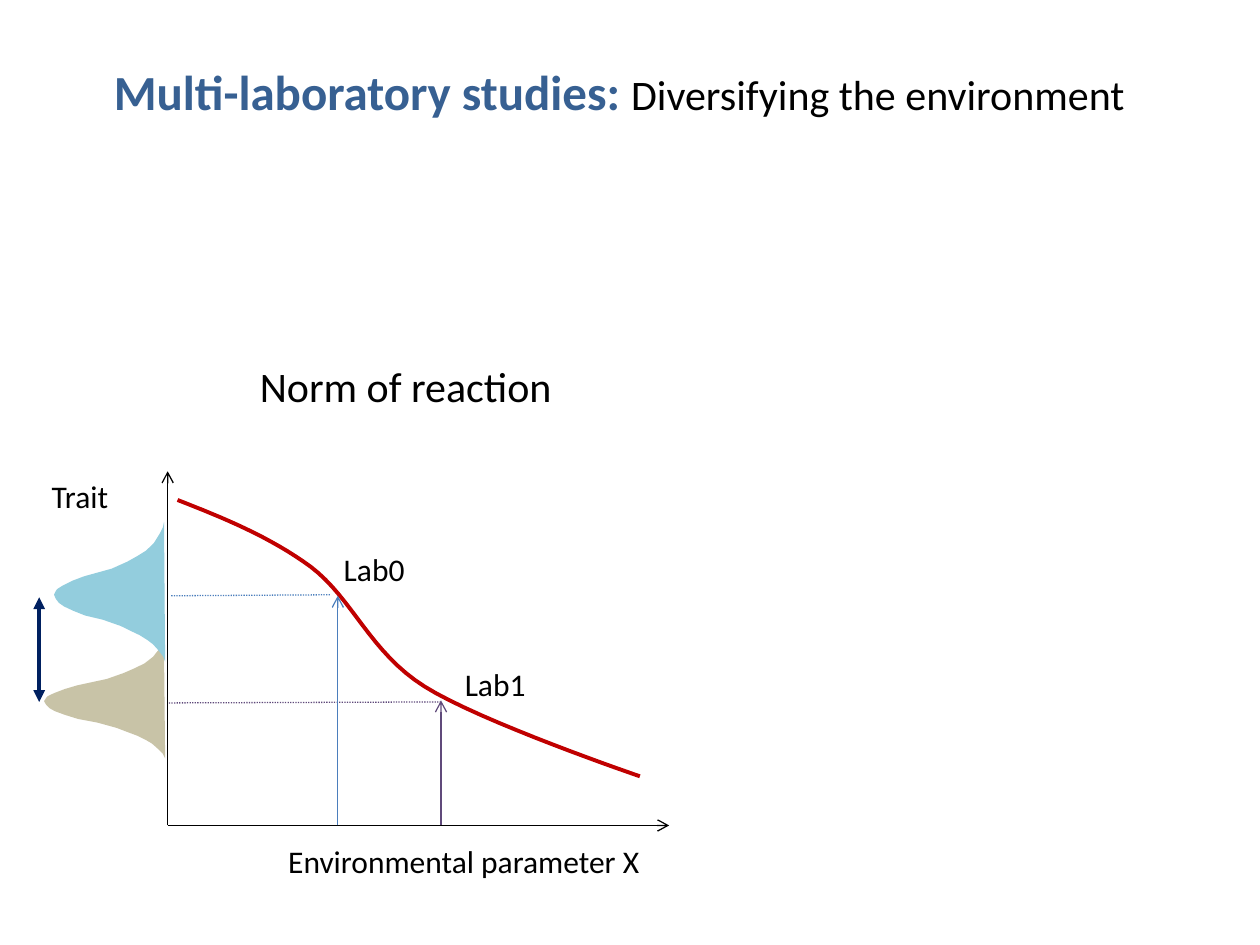
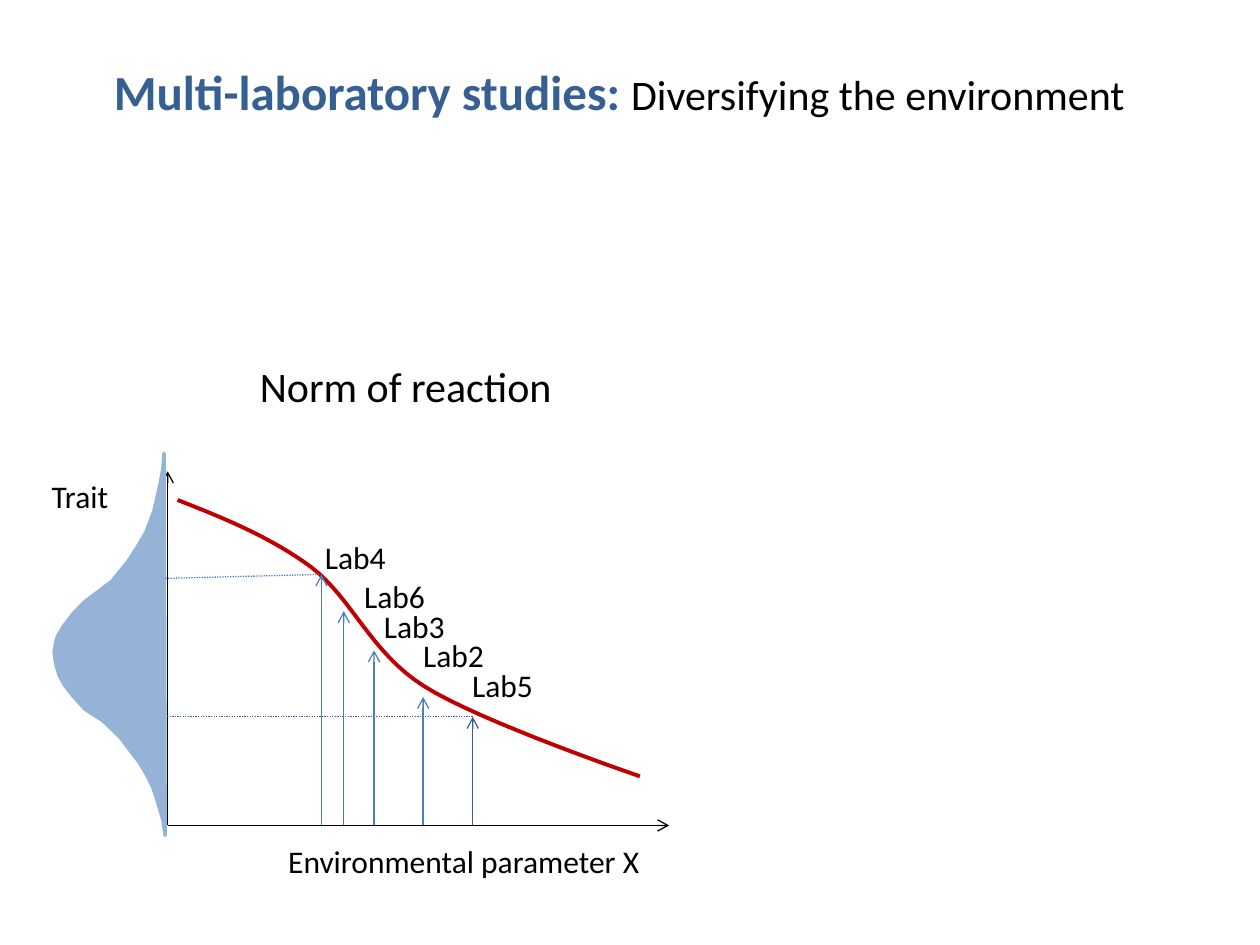
from lxml import etree
from pptx import Presentation
from pptx import util as u
from pptx.dml.color import RGBColor
from pptx.enum import dml, shapes, text
from pptx.oxml.ns import qn

BLACK = RGBColor(0x00, 0x00, 0x00)
NAVY = RGBColor(0x00, 0x20, 0x60)
TITLE_BLUE = RGBColor(0x37, 0x60, 0x92)
LAB_BLUE = RGBColor(0x4B, 0x7E, 0xBC)
PURPLE = RGBColor(0x60, 0x4A, 0x7B)
RED = RGBColor(0xC0, 0x00, 0x00)
TAN = RGBColor(0x94, 0x8A, 0x54)
AQUA = RGBColor(0x93, 0xCD, 0xDD)
PALE_BLUE = RGBColor(0x95, 0xB3, 0xD7)
FONT = "Calibri"

# Shared content; all positions are in centimetres
HEADINGS = [
    ((0.89, 1.12, 23.19, 4.88),
     [("Multi-laboratory studies: ", dict(size=u.Pt(28), bold=True), TITLE_BLUE),
      ("Diversifying the environment", dict(size=u.Pt(24), bold=False), BLACK)]),
    ((3.66, 7.14, 9.04, 2.11),
     [("Norm of reaction", dict(size=u.Pt(24)), BLACK)]),
]
AXIS_LABELS = [("Trait", (0.79, 9.5, 1.65, 1.02)),
               ("Environmental parameter X", (5.56, 16.84, 7.67, 1.02))]
ORIGIN = (3.38, 16.64)
AXIS_ENDS = [(13.49, 16.64), (3.38, 9.5)]
CURVE_START = (3.58, 10.08)
CURVE_BEZIERS = [
    ((4.5, 10.44), (5.44, 10.82), (6.27, 11.43)),
    ((7.11, 12.07), (7.47, 13.16), (8.56, 13.84)),
    ((9.68, 14.55), (12.9, 15.65), (12.9, 15.65)),
]
CURVE_STEPS = 16

# Bell outline as percent of its width and height, from bottom to top
BELL = [(100, 100), (98, 96), (93, 91), (89, 87.5), (84, 84.5), (77, 81),
        (69, 78), (60, 74.5), (44, 70), (28, 67), (17, 63.5), (9, 60.5),
        (4.5, 58), (2, 55.5), (1, 54), (0, 52), (2, 49), (3, 48), (8, 45.5),
        (17, 42), (27, 39), (36, 37), (52, 33.5), (66, 28.5), (75, 24.5),
        (83, 20.5), (90, 15), (95.5, 8), (98, 4), (99, 0)]

# Lab: name, label corner, arrow tip, colour, dotted line to the axis (or None)
# Bell: box, colour, opacity in percent, outline width
SLIDES = [
    dict(labs=[
            ("Lab1", (9.12, 13.28), (8.89, 14.12), PURPLE,
             ((8.89, 14.15), (3.4, 14.17))),
            ("Lab0", (6.68, 10.97), (6.81, 12.01), LAB_BLUE,
             ((6.65, 11.99), (3.43, 12.01)))],
         bells=[((0.89, 12.88, 2.44, 2.41), TAN, 51, 0),
                ((1.09, 10.52, 2.24, 2.82), AQUA, 100, 0)],
         shift=((0.79, 12.04), (0.79, 14.15))),
    dict(labs=[
            ("Lab5", (9.27, 13.31), (9.53, 14.45), TITLE_BLUE,
             ((9.53, 14.45), (3.33, 14.45))),
            ("Lab4", (6.3, 10.72), (6.48, 11.58), LAB_BLUE,
             ((6.43, 11.58), (3.33, 11.66))),
            ("Lab6", (7.09, 11.51), (6.93, 12.32), LAB_BLUE, None),
            ("Lab3", (7.49, 12.12), (7.54, 13.11), LAB_BLUE, None),
            ("Lab2", (8.28, 12.7), (8.53, 14.05), LAB_BLUE, None)],
         bells=[((1.09, 9.14, 2.24, 7.7), PALE_BLUE, 100, 2)],
         shift=None),
]


def cm(values):
    return [u.Cm(v) for v in values]


def add_text(s, box, runs, align=text.PP_ALIGN.LEFT, wrap=False):
    tf = s.shapes.add_textbox(*cm(box)).text_frame
    tf.word_wrap = wrap
    p = tf.paragraphs[0]
    p.alignment = align
    for words, formats, color in runs:
        r = p.add_run()
        r.text = words
        for name, value in dict(name=FONT, **formats).items():
            setattr(r.font, name, value)
        r.font.color.rgb = color


def add_line(s, start, end, color, width=0.75, head=None, tail=None, dotted=False):
    c = s.shapes.add_connector(shapes.MSO_CONNECTOR.STRAIGHT, *cm(start + end))
    c.line.color.rgb = color
    c.line.width = u.Pt(width)
    if dotted:
        c.line.dash_style = dml.MSO_LINE.ROUND_DOT
    ln = c.line._get_or_add_ln()
    for tag, kind in (("a:headEnd", head), ("a:tailEnd", tail)):
        if kind:
            etree.SubElement(ln, qn(tag), type=kind)
    etree.SubElement(c._element.spPr, qn("a:effectLst"))


def add_outline(s, points, close):
    points = [cm(point) for point in points]
    builder = s.shapes.build_freeform(*points[0])
    builder.add_line_segments(points[1:], close=close)
    sp = builder.convert_to_shape()
    sp.shadow.inherit = False
    return sp


def add_curve(s):
    points = [CURVE_START]
    for b, c, d in CURVE_BEZIERS:
        a = points[-1]
        for step in range(1, CURVE_STEPS + 1):
            t = step / CURVE_STEPS
            weights = ((1 - t) ** 3, 3 * t * (1 - t) ** 2, 3 * t * t * (1 - t), t ** 3)
            points.append(tuple(sum(w * v for w, v in zip(weights, axis))
                                for axis in zip(a, b, c, d)))
    sp = add_outline(s, points, close=False)
    sp.fill.background()
    sp.line.color.rgb = RED
    sp.line.width = u.Pt(2.25)


def add_bell(s, box, color, opacity, outline):
    left, top, width, height = box
    sp = add_outline(s, [(left + width * x / 100, top + height * y / 100)
                         for x, y in BELL], close=True)
    sp.fill.solid()
    sp.fill.fore_color.rgb = color
    if opacity < 100:
        clr = sp._element.spPr.find(qn("a:solidFill"))[0]
        etree.SubElement(clr, qn("a:alpha"), val=str(opacity * 1000))
    if outline:
        sp.line.color.rgb = color
        sp.line.width = u.Pt(outline)
    else:
        sp.line.fill.background()


def add_label(s, words, box):
    add_text(s, box, [(words, dict(size=u.Pt(18)), BLACK)])


def build_slide(prs, labs, bells, shift):
    s = prs.slides.add_slide(prs.slide_layouts[6])
    # Axes and reaction curve
    for end in AXIS_ENDS:
        add_line(s, ORIGIN, end, BLACK, tail="arrow")
    add_curve(s)
    for words, box in AXIS_LABELS:
        add_label(s, words, box)
    # Labs: arrow up to the curve, dotted line to the trait axis
    for name, corner, tip, color, dots in labs:
        add_line(s, (tip[0], ORIGIN[1]), tip, color, tail="arrow")
        if dots:
            add_line(s, *dots, color, dotted=True)
        add_label(s, name, corner + (1.75, 1.02))
    # Trait distributions and the shift between them
    for bell in bells:
        add_bell(s, *bell)
    if shift:
        add_line(s, *shift, NAVY, 2.25, head="triangle", tail="triangle")
    # Title and diagram heading
    for box, runs in HEADINGS:
        add_text(s, box, runs, text.PP_ALIGN.CENTER, wrap=True)


def main():
    prs = Presentation()
    prs.slide_width, prs.slide_height = u.Cm(25.4), u.Cm(19.05)
    for content in SLIDES:
        build_slide(prs, **content)
    prs.save("out.pptx")


if __name__ == "__main__":
    main()
